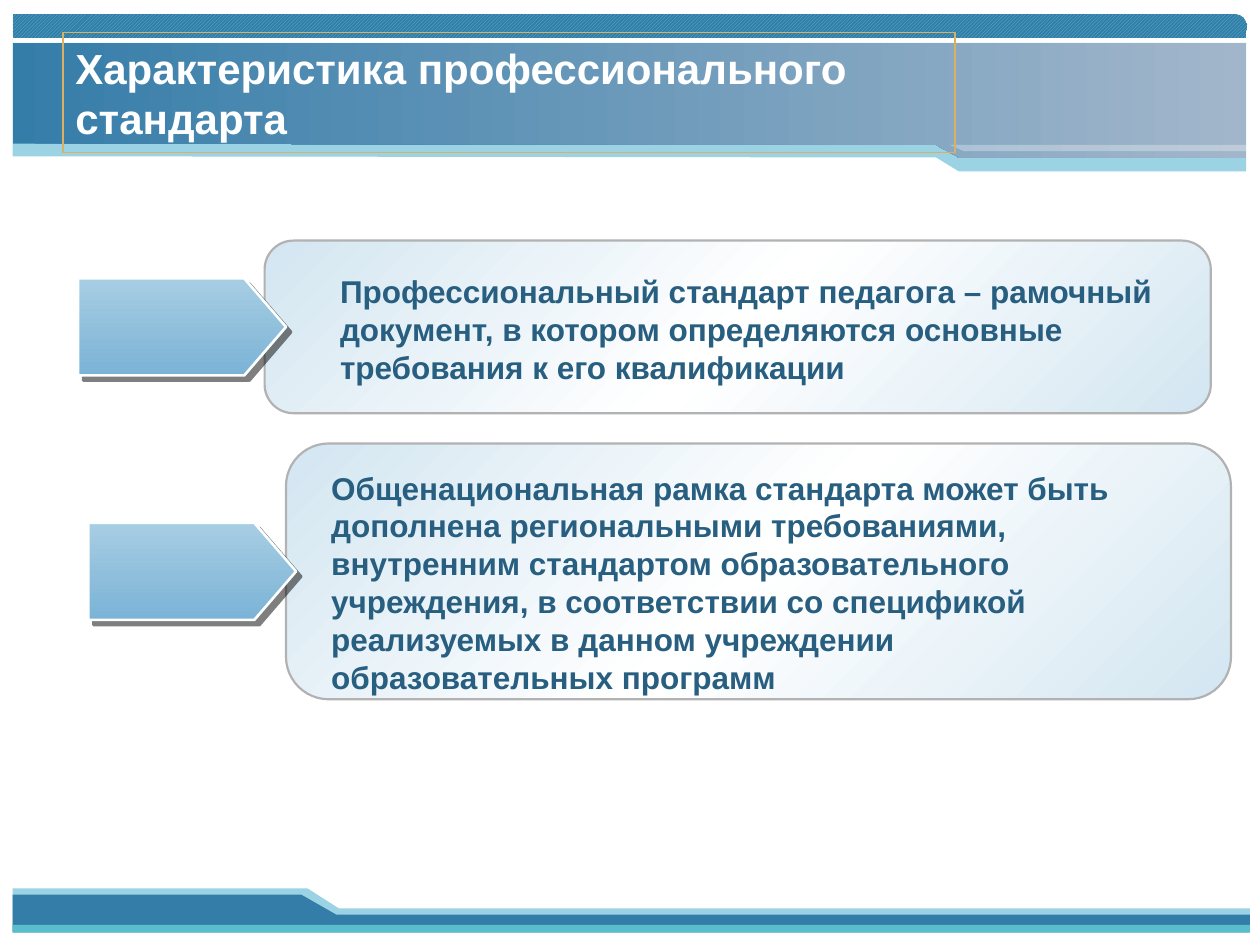
import pptx
import pptx.dml.color
import pptx.enum.dml
import pptx.enum.shapes
import pptx.enum.text
import pptx.oxml
import pptx.oxml.ns
import pptx.util

RGB = pptx.dml.color.RGBColor
SHAPE = pptx.enum.shapes.MSO_SHAPE
ANCHOR = pptx.enum.text.MSO_ANCHOR
NS = pptx.oxml.ns.nsdecls("a")

WHITE = RGB(0xFF, 0xFF, 0xFF)
BLUE = RGB(0x35, 0x7D, 0xA9)
SKY = RGB(0x9B, 0xD3, 0xE5)
TEAL = RGB(0x58, 0xBE, 0xCC)
HAZE = RGB(0xA2, 0xB6, 0xCB)
PALE = RGB(0xD3, 0xE6, 0xF1)
GREY = RGB(0xB2, 0xB2, 0xB2)
GOLD = RGB(0xDA, 0xB0, 0x64)
ARROW_TOP = RGB(0xA7, 0xCD, 0xE3)
ARROW_BOTTOM = RGB(0x7B, 0xB3, 0xD6)
ARROW_EDGE = RGB(0xFE, 0xFF, 0xFF)
INK = RGB(0x28, 0x5E, 0x7F)

# The slide is a grid of 100 columns by 75 rows of square cells.
COLUMNS, ROWS = 100, 75
CELL = pptx.util.Inches(0.1)
ARROW_WIDTH, ARROW_HEIGHT = 16.5, 7.7
TEXT_WIDTH = 68.5


def cells(*counts):
    return [round(count * CELL) for count in counts]


def paint(shape, color=None, edge=None, edge_width=1):
    shape.shadow.inherit = False
    if color is None:
        shape.fill.background()
    else:
        shape.fill.solid()
        shape.fill.fore_color.rgb = color
    if edge is None:
        shape.line.fill.background()
    else:
        shape.line.color.rgb = edge
        shape.line.width = pptx.util.Pt(edge_width)


def blend(shape, colors, angle):
    """Replace the solid fill by evenly spaced gradient stops."""
    stops = "".join(
        f'<a:gs pos="{100000 * i // (len(colors) - 1)}"><a:srgbClr val="{color}"/></a:gs>'
        for i, color in enumerate(colors))
    solid = shape.fill._xPr.find(pptx.oxml.ns.qn("a:solidFill"))
    solid.getparent().replace(solid, pptx.oxml.parse_xml(
        f'<a:gradFill {NS} rotWithShape="1"><a:gsLst>{stops}</a:gsLst>'
        f'<a:lin ang="{angle * 60000}" scaled="0"/></a:gradFill>'))


def cast_shadow(shape):
    effects = shape._element.spPr.find(pptx.oxml.ns.qn("a:effectLst"))
    effects.append(pptx.oxml.parse_xml(
        f'<a:outerShdw {NS} dist="{pptx.util.Pt(4.2)}" dir="2700000" algn="ctr" '
        'rotWithShape="0"><a:srgbClr val="000000"><a:alpha val="50000"/>'
        '</a:srgbClr></a:outerShdw>'))


def add_band(slide, left, top, points, color):
    """Draw a closed outline whose points are counted in cells from left, top."""
    corners = [cells(left + x, top + y) for x, y in points]
    builder = slide.shapes.build_freeform(*corners[0])
    builder.add_line_segments(corners[1:], close=True)
    band = builder.convert_to_shape()
    paint(band, color)
    return band


def write(shape, words, size, color, anchor):
    frame = shape.text_frame
    frame.word_wrap = True
    frame.vertical_anchor = anchor
    frame.text = words
    font = frame.paragraphs[0].runs[0].font
    font.name, font.size, font.bold = "Arial", pptx.util.Pt(size), True
    font.color.rgb = color


def add_footer(slide, left, top, width, height):
    right = left + width
    add_band(slide, left, top, [(0, 0), (23.4, 0), (25.9, 1.6), (width, 1.6),
                                (width, height), (0, height)], SKY)
    add_band(slide, left, top, [(0, 0.5), (22.9, 0.5), (25.7, 2.1), (width, 2.1),
                                (width, height), (0, height)], BLUE)
    strip = slide.shapes.add_shape(
        SHAPE.RECTANGLE, *cells(left, top + height - 0.6, right - left, 0.6))
    paint(strip, TEAL)


def add_header(slide, left, top, width, title):
    hatch = add_band(slide, left, top, [
        (0, 0), (width - 1, 0), (width - 0.6, 0.1), (width - 0.3, 0.3),
        (width, 0.8), (width - 0.1, 1.9), (0, 1.9)], BLUE)
    hatch.fill.patterned()
    hatch.fill.pattern = pptx.enum.dml.MSO_PATTERN.DARK_UPWARD_DIAGONAL
    hatch.fill.fore_color.rgb = TEAL
    hatch.fill.back_color.rgb = BLUE

    banner_top = top + 2.3
    for color, depth, step in ((SKY, 9, 10.2), (BLUE, 8, 9.1)):
        banner = add_band(slide, left, banner_top, [
            (0, 0), (width - 0.1, 0), (width - 0.1, step), (75.1, step),
            (73.3, depth + 0.1), (0, depth)], color)
    blend(banner, [BLUE, HAZE], 0)

    glint = add_band(slide, left + 74.4, banner_top + 8.1,
                     [(0, 0), (23.6, 0), (23.6, 0.5), (1.1, 0.5)], WHITE)
    glint.fill._xPr.find(".//" + pptx.oxml.ns.qn("a:srgbClr")).append(
        pptx.oxml.parse_xml(f'<a:alpha {NS} val="30000"/>'))

    heading = slide.shapes.add_textbox(*cells(left + 4, top + 1.5, 70.8, 9.5))
    paint(heading, edge=GOLD, edge_width=0.75)
    write(heading, title, 24, WHITE, ANCHOR.MIDDLE)


def add_statement(slide, left, top, width, height, arrow_reach, inset, words):
    """Place a panel, its text at the inset, and an arrow reaching out to the left."""
    panel = slide.shapes.add_shape(
        SHAPE.ROUNDED_RECTANGLE, *cells(left, top, width, height))
    paint(panel, PALE, GREY, 1.25)
    blend(panel, [PALE, WHITE, PALE], 45)

    arrow = slide.shapes.add_shape(SHAPE.PENTAGON, *cells(
        left - arrow_reach, top + (height - ARROW_HEIGHT) / 2, ARROW_WIDTH, ARROW_HEIGHT))
    arrow.adjustments[0] = 0.43
    paint(arrow, ARROW_TOP, ARROW_EDGE, 1.5)
    blend(arrow, [ARROW_TOP, ARROW_BOTTOM], 90)
    cast_shadow(arrow)

    across, down = inset
    text = slide.shapes.add_textbox(
        *cells(left + across, top + down, TEXT_WIDTH, height - down))
    write(text, words, 18, INK, ANCHOR.TOP)


def main():
    deck = pptx.Presentation()
    deck.slide_width, deck.slide_height = cells(COLUMNS, ROWS)
    slide = deck.slides.add_slide(deck.slide_layouts[6])
    add_footer(slide, 1, 70.5, 98.2, 3.5)
    add_header(slide, 1, 1.1, 98, "Характеристика профессионального стандарта")
    add_statement(
        slide, 21, 19.1, 75.1, 13.7, 14.8, (5, 2),
        "Профессиональный стандарт педагога – рамочный документ, в котором "
        "определяются основные требования к его квалификации")
    add_statement(
        slide, 22.7, 35.2, 75, 20.3, 15.7, (2.6, 1.5),
        "Общенациональная рамка стандарта может быть дополнена региональными "
        "требованиями, внутренним стандартом образовательного учреждения, в "
        "соответствии со спецификой реализуемых в данном учреждении "
        "образовательных программ")
    deck.save("out.pptx")


if __name__ == "__main__":
    main()
